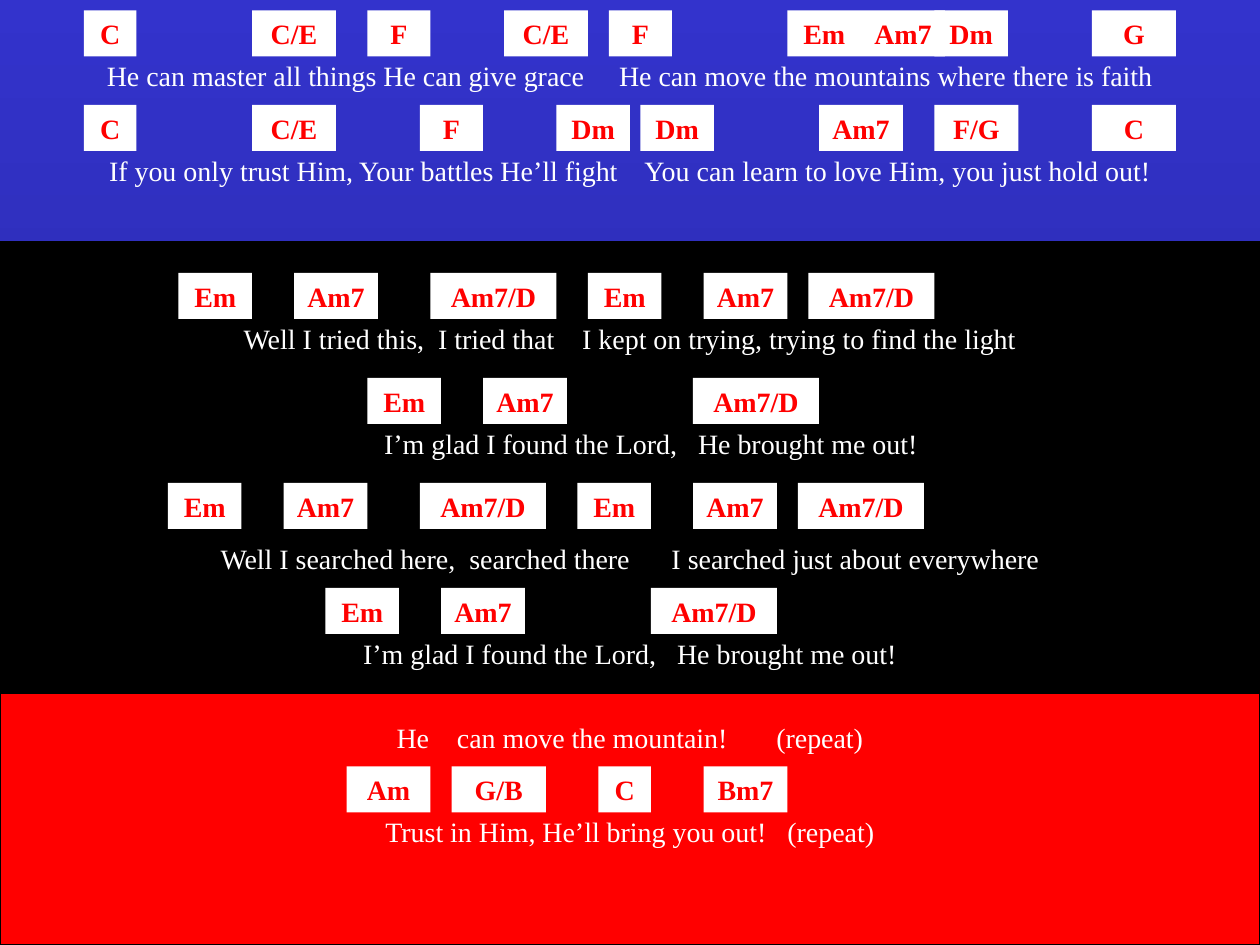
from dataclasses import dataclass

from pptx import Presentation
from pptx.dml.color import RGBColor
from pptx.enum.shapes import MSO_SHAPE
from pptx.enum.text import MSO_AUTO_SIZE, PP_ALIGN
from pptx.shapes.autoshape import Shape
from pptx.slide import Slide
from pptx.util import Emu, Pt

PX = 9525  # EMU per px, 96 px to the inch
SLIDE_WIDTH, SLIDE_HEIGHT = 960, 720
ROW_HEIGHT = 35

FONT_NAME = "Times New Roman"
FONT_SIZE = Pt(16)
WHITE = RGBColor(0xFF, 0xFF, 0xFF)
BLACK = RGBColor(0x00, 0x00, 0x00)
RED = RGBColor(0xFF, 0x00, 0x00)
BLUE = RGBColor(0x33, 0x33, 0xCC)
DARK_BLUE = RGBColor(0x24, 0x24, 0x92)

CHORD_WIDTHS = {
    "C": 40, "F": 48, "Dm": 56, "Em": 56, "G/B": 72, "Am7/D": 96,
}
DEFAULT_CHORD_WIDTH = 64


@dataclass(frozen=True)
class Band:
    top: int
    height: int
    color: RGBColor


@dataclass(frozen=True)
class Lyric:
    top: int
    text: str
    left: int = 0


@dataclass(frozen=True)
class Chord:
    left: int
    name: str
    width: int = 0  # 0 means the usual width for this name


@dataclass(frozen=True)
class ChordRow:
    top: int
    chords: tuple[Chord, ...]


BANDS = (Band(528, 192, RED), Band(184, 344, BLACK))

LYRICS = (
    Lyric(40, "He can master all things He can give grace     "
              "He can move the mountains where there is faith"),
    Lyric(112, "If you only trust Him, Your battles He’ll fight    "
               "You can learn to love Him, you just hold out!"),
    Lyric(240, "Well I tried this,  I tried that    "
               "I kept on trying, trying to find the light"),
    Lyric(320, "I’m glad I found the Lord,   He brought me out!", left=16),
    Lyric(408, "Well I searched here,  searched there      "
               "I searched just about everywhere"),
    Lyric(480, "I’m glad I found the Lord,   He brought me out!"),
    Lyric(544, "He    can move the mountain!       (repeat)"),
    Lyric(616, "Trust in Him, He’ll bring you out!   (repeat)"),
)


def long_phrase(left: int) -> tuple[Chord, ...]:
    """Em, Am7, Am7/D played twice."""
    return (
        Chord(left, "Em"), Chord(left + 88, "Am7"), Chord(left + 192, "Am7/D"),
        Chord(left + 312, "Em"), Chord(left + 400, "Am7"), Chord(left + 480, "Am7/D"),
    )


def short_phrase(left: int) -> tuple[Chord, ...]:
    """Em, Am7, Am7/D played once."""
    return Chord(left, "Em"), Chord(left + 88, "Am7"), Chord(left + 248, "Am7/D")


CHORD_ROWS = (
    ChordRow(8, (
        Chord(64, "C"), Chord(192, "C/E"), Chord(280, "F"), Chord(384, "C/E"),
        Chord(464, "F"), Chord(600, "Em"), Chord(656, "Am7"), Chord(712, "Dm"),
        Chord(832, "G"),
    )),
    ChordRow(80, (
        Chord(64, "C"), Chord(192, "C/E"), Chord(320, "F"), Chord(424, "Dm"),
        Chord(488, "Dm"), Chord(624, "Am7"), Chord(712, "F/G"),
        Chord(832, "C", width=64),
    )),
    ChordRow(208, long_phrase(136)),
    ChordRow(288, short_phrase(280)),
    ChordRow(368, long_phrase(128)),
    ChordRow(448, short_phrase(248)),
    ChordRow(584, (
        Chord(264, "Am"), Chord(344, "G/B"), Chord(456, "C"), Chord(536, "Bm7"),
    )),
)


def px(*lengths: int) -> list[Emu]:
    return [Emu(length * PX) for length in lengths]


def paint_background(slide: Slide) -> None:
    fill = slide.background.fill
    fill.gradient()
    fill.gradient_angle = 270
    for stop, color, position in zip(fill.gradient_stops, (BLUE, DARK_BLUE), (0, 1)):
        stop.color.rgb = color
        stop.position = position


def add_rectangle(slide: Slide, left: int, top: int, width: int, height: int,
                  color: RGBColor) -> Shape:
    shape = slide.shapes.add_shape(MSO_SHAPE.RECTANGLE, *px(left, top, width, height))
    shape.shadow.inherit = False
    shape.fill.solid()
    shape.fill.fore_color.rgb = color
    return shape


def set_text(shape: Shape, text: str, color: RGBColor, bold: bool = False) -> None:
    frame = shape.text_frame
    frame.word_wrap = True
    frame.auto_size = MSO_AUTO_SIZE.SHAPE_TO_FIT_TEXT
    paragraph = frame.paragraphs[0]
    paragraph.text = text
    paragraph.alignment = PP_ALIGN.CENTER
    paragraph.font.name = FONT_NAME
    paragraph.font.size = FONT_SIZE
    paragraph.font.bold = bold
    paragraph.font.color.rgb = color


def draw_band(slide: Slide, band: Band) -> None:
    shape = add_rectangle(slide, 0, band.top, SLIDE_WIDTH, band.height, band.color)
    shape.line.color.rgb = BLACK
    shape.line.width = Pt(0.75)


def draw_lyric(slide: Slide, lyric: Lyric) -> None:
    box = slide.shapes.add_textbox(*px(lyric.left, lyric.top, SLIDE_WIDTH, ROW_HEIGHT))
    set_text(box, lyric.text, WHITE)


def draw_chord(slide: Slide, chord: Chord, top: int) -> None:
    width = chord.width or CHORD_WIDTHS.get(chord.name, DEFAULT_CHORD_WIDTH)
    shape = add_rectangle(slide, chord.left, top, width, ROW_HEIGHT, WHITE)
    shape.line.fill.background()
    set_text(shape, chord.name, RED, bold=True)


def main() -> None:
    presentation = Presentation()
    presentation.slide_width, presentation.slide_height = px(SLIDE_WIDTH, SLIDE_HEIGHT)
    slide = presentation.slides.add_slide(presentation.slide_layouts[6])

    # Background and coloured sections
    paint_background(slide)
    for band in BANDS:
        draw_band(slide, band)

    # Words, then the chords above them
    for lyric in LYRICS:
        draw_lyric(slide, lyric)
    for row in CHORD_ROWS:
        for chord in row.chords:
            draw_chord(slide, chord, row.top)

    presentation.save("out.pptx")


if __name__ == "__main__":
    main()
